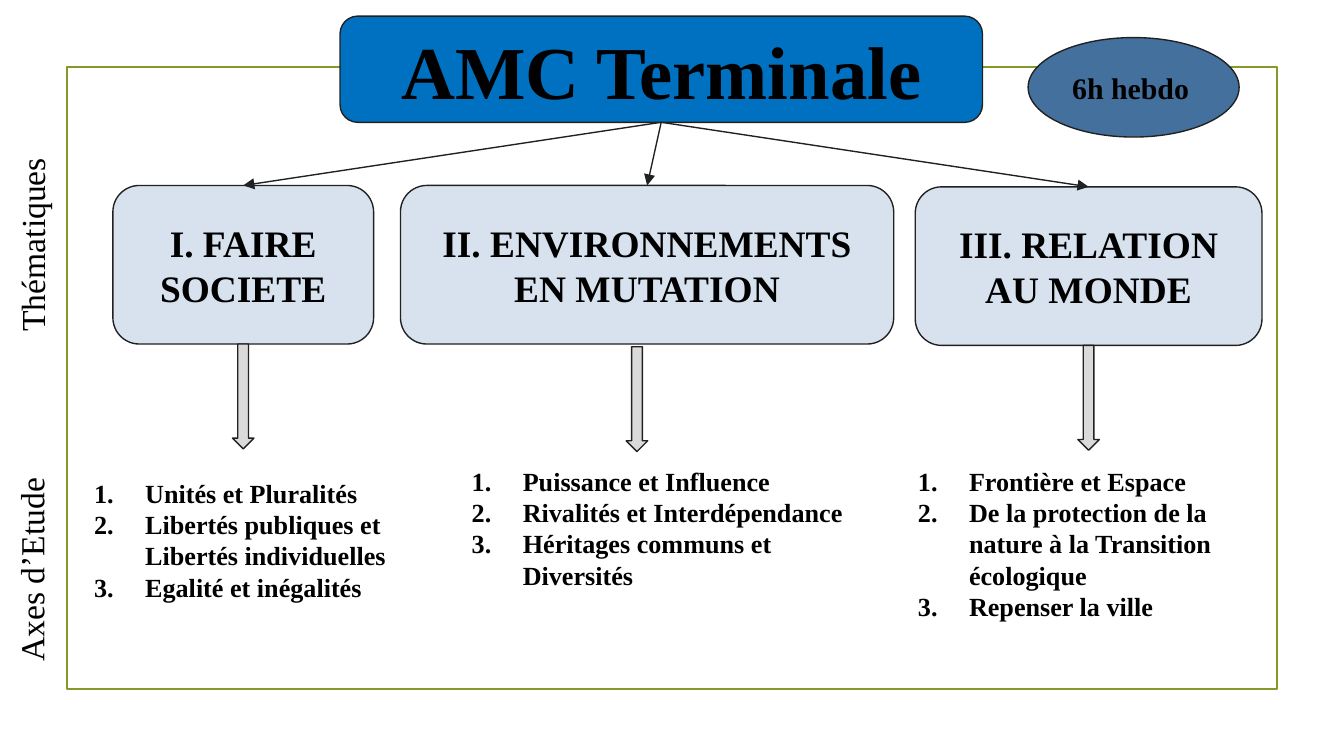
from lxml.etree import SubElement
from pptx import Presentation
from pptx.dml.color import RGBColor
from pptx.enum.shapes import MSO_CONNECTOR, MSO_SHAPE
from pptx.enum.text import MSO_ANCHOR as ANCHOR, MSO_AUTO_SIZE, PP_ALIGN as ALIGN
from pptx.oxml.ns import qn
from pptx.util import Inches, Pt

COLORS = {
    "frame": "83992A", "title": "0070C0", "theme": "D7E2EE", "hours": "44709D",
    "arrow": "DADADA", "outline": "212121", "text": "000000",
}


def write(shape, lines, size, bold=True, align=ALIGN.LEFT, anchor=ANCHOR.TOP, numbered=False):
    frame = shape.text_frame
    frame.word_wrap = True
    frame.auto_size = MSO_AUTO_SIZE.NONE
    frame.vertical_anchor = anchor
    frame.margin_left = frame.margin_right = Inches(0.1)
    frame.margin_top = frame.margin_bottom = Inches(0.1)
    for index, line in enumerate(lines):
        paragraph = frame.paragraphs[0] if index == 0 else frame.add_paragraph()
        paragraph.text = line
        paragraph.alignment = align
        paragraph.space_before = Pt(0)
        paragraph.line_spacing = 1.0
        if numbered:
            properties = paragraph._p.get_or_add_pPr()
            properties.set("marL", str(Inches(0.38)))
            properties.set("indent", str(Inches(-0.38)))
            SubElement(properties, qn("a:buFontTx"))
            SubElement(properties, qn("a:buAutoNum"), type="arabicPeriod")
        paragraph.font.name = "Times New Roman"
        paragraph.font.size = Pt(size)
        paragraph.font.bold = bold
        paragraph.font.color.rgb = RGBColor.from_string(COLORS["text"])


def add_box(shapes, preset, left, top, width, height, fill=None, outline="outline", line_width=0.75):
    shape = shapes.add_shape(preset, Inches(left), Inches(top), Inches(width), Inches(height))
    shape.shadow.inherit = False
    if fill:
        shape.fill.solid()
        shape.fill.fore_color.rgb = RGBColor.from_string(COLORS[fill])
    else:
        shape.fill.background()
    shape.line.color.rgb = RGBColor.from_string(COLORS[outline])
    shape.line.width = Pt(line_width)
    return shape


presentation = Presentation()
presentation.slide_width = Inches(10)
presentation.slide_height = presentation.slide_width * 9 // 16
slide = presentation.slides.add_slide(presentation.slide_layouts.get_by_name("Comparison"))
shapes = slide.shapes

title = shapes.title
border = add_box(shapes, MSO_SHAPE.RECTANGLE, 0.5, 0.5, 9, 4.63, outline="frame", line_width=1.25)
banner = add_box(shapes, MSO_SHAPE.FLOWCHART_ALTERNATE_PROCESS, 2.53, 0.12, 4.78, 0.79, "title")
for backdrop in (border, banner):
    title._element.addprevious(backdrop._element)

title.left, title.top = banner.left, banner.top
title.width, title.height = banner.width, banner.height
write(title, ["AMC Terminale"], size=40, align=ALIGN.CENTER, anchor=ANCHOR.MIDDLE)

hours = add_box(shapes, MSO_SHAPE.OVAL, 7.65, 0.28, 1.57, 0.74, "hours")
write(hours, ["6h hebdo"], size=16, anchor=ANCHOR.MIDDLE)

themes = [
    ("I. FAIRE SOCIETE", (0.84, 1.38, 1.94), (1.73, 2.56), (0.6, 3.45, 2.59),
     ["Unités et Pluralités", "Libertés publiques et Libertés individuelles",
      "Egalité et inégalités"]),
    ("II. ENVIRONNEMENTS EN MUTATION", (2.98, 1.38, 3.67), (4.66, 2.58), (3.41, 3.36, 3.02),
     ["Puissance et Influence", "Rivalités et Interdépendance",
      "Héritages communs et Diversités"]),
    ("III. RELATION AU MONDE", (6.81, 1.39, 2.58), (8.02, 2.57), (6.73, 3.36, 2.9),
     ["Frontière et Espace", "De la protection de la nature à la Transition écologique",
      "Repenser la ville"]),
]
bodies = [shape for shape in slide.placeholders if shape.placeholder_format.idx > 0]

for (name, box, arrow_corner, list_box, topics), body in zip(themes, bodies):
    theme = add_box(shapes, MSO_SHAPE.FLOWCHART_ALTERNATE_PROCESS, *box, 1.18, "theme")
    write(theme, [name], size=20, align=ALIGN.CENTER, anchor=ANCHOR.MIDDLE)

    connector = shapes.add_connector(MSO_CONNECTOR.STRAIGHT, 0, 0, 0, 0)
    connector.begin_connect(banner, 2)
    connector.end_connect(theme, 0)
    connector.line.color.rgb = RGBColor.from_string(COLORS["outline"])
    connector.line.width = Pt(0.75)
    SubElement(connector.line._get_or_add_ln(), qn("a:tailEnd"), type="triangle")
    SubElement(connector._element.spPr, qn("a:effectLst"))

    add_box(shapes, MSO_SHAPE.DOWN_ARROW, *arrow_corner, 0.16, 0.78, "arrow")

    body.left, body.top, body.width = map(Inches, list_box)
    body.height = Inches(1.4)
    write(body, topics, size=14, numbered=True)

for body in bodies[len(themes):]:
    body._element.getparent().remove(body._element)

for label, left, top, width in [("Thématiques", -0.75, 1.39, 1.91), ("Axes d’Etude", -0.9, 3.7, 2.2)]:
    side_label = shapes.add_textbox(Inches(left), Inches(top), Inches(width), Inches(0.44))
    side_label.rotation = 270
    write(side_label, [label], size=18, bold=False)

presentation.save("out.pptx")
